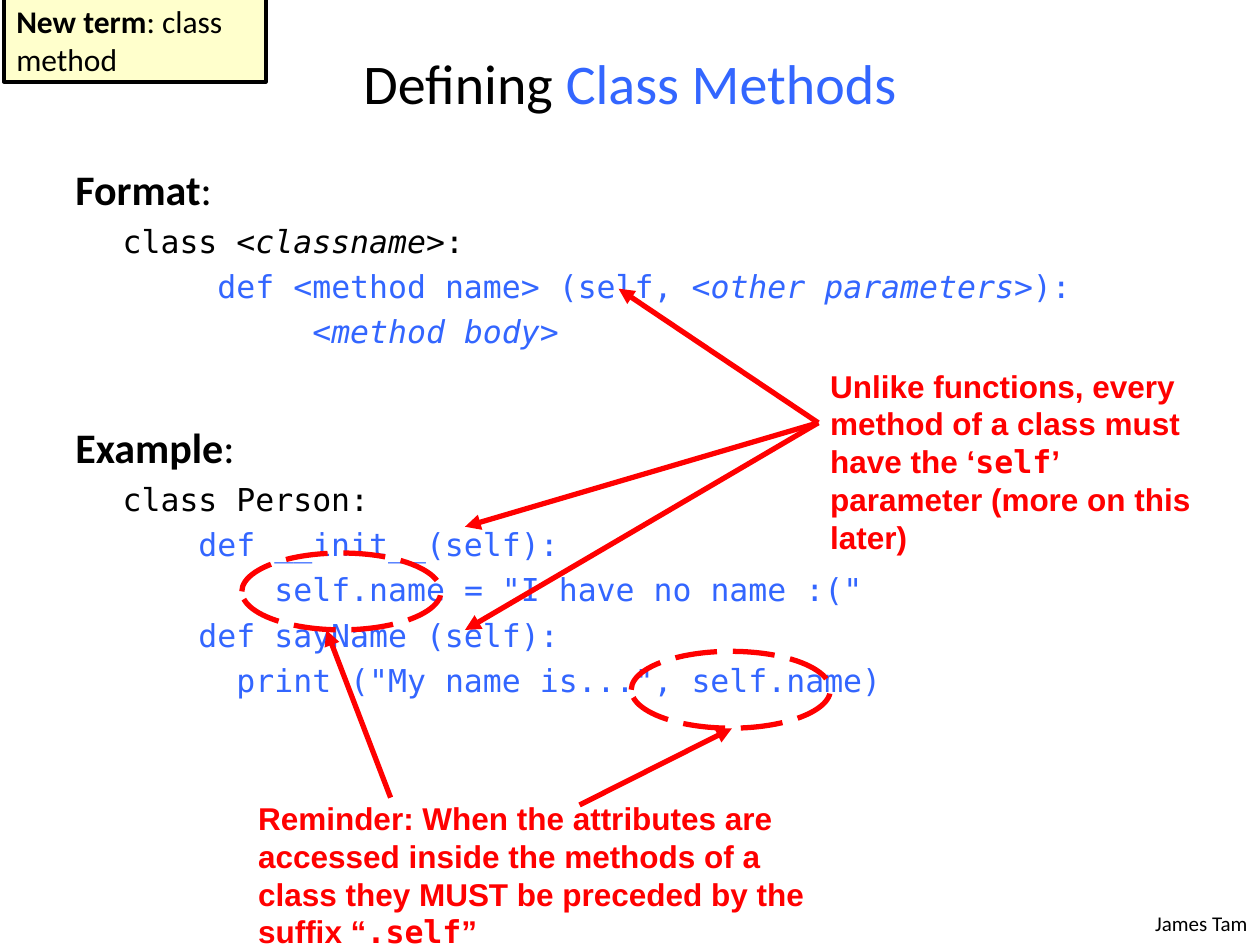
from lxml import etree
from pptx import Presentation
from pptx.dml.color import RGBColor
from pptx.enum.dml import MSO_LINE
from pptx.enum.shapes import MSO_CONNECTOR, MSO_SHAPE
from pptx.enum.text import MSO_ANCHOR, PP_ALIGN
from pptx.oxml.ns import qn
from pptx.util import Pt

LEFT, CENTER, RIGHT = PP_ALIGN.LEFT, PP_ALIGN.CENTER, PP_ALIGN.RIGHT
MIDDLE = MSO_ANCHOR.MIDDLE
STRAIGHT = MSO_CONNECTOR.STRAIGHT
RECTANGLE, OVAL = MSO_SHAPE.RECTANGLE, MSO_SHAPE.OVAL
LONG_DASH = MSO_LINE.LONG_DASH

BLACK, BLUE, RED, YELLOW = "000000", "3366FF", "FF0000", "FFFFCC"
SANS, CALLOUT, MONO = "Calibri", "Arial", "DejaVu Sans Mono"
TITLE_ONLY = 5


def rgb(hex_code):
    return RGBColor.from_string(hex_code)


class LessonSlide:
    """Holds the current slide and the lesson's visual style."""

    code_size = 18
    code_indent = 27
    char_width = 10.84
    line_width = 3

    def __init__(self, slide):
        self.slide = slide

    def fill_paragraph(self, paragraph, runs, font, size, color=BLACK, bold=False,
                       align=LEFT):
        """Fill a paragraph with (text, font overrides) pairs."""
        paragraph.alignment = align
        base = paragraph.font
        base.name, base.size, base.bold = font, Pt(size), bold
        base.color.rgb = rgb(color)
        for text, overrides in runs:
            run = paragraph.add_run()
            run.text = text
            if "color" in overrides:
                run.font.color.rgb = rgb(overrides["color"])
            if "name" in overrides:
                run.font.name = overrides["name"]
            if "bold" in overrides:
                run.font.bold = overrides["bold"]
            if "italic" in overrides:
                run.font.italic = overrides["italic"]

    def title(self, box, runs):
        title = self.slide.shapes.title
        title.left, title.top, title.width, title.height = map(Pt, box)
        title.text_frame.vertical_anchor = MIDDLE
        self.fill_paragraph(title.text_frame.paragraphs[0], runs, SANS, 32, align=CENTER)

    def text_frame(self, box):
        frame = self.slide.shapes.add_textbox(*map(Pt, box)).text_frame
        frame.word_wrap = True
        return frame

    def text(self, box, runs, font, size, **style):
        paragraph = self.text_frame(box).paragraphs[0]
        self.fill_paragraph(paragraph, runs, font, size, **style)

    def callout(self, box, runs):
        self.text(box, runs, CALLOUT, 18, color=RED, bold=True)

    def heading(self, paragraph, label, space_before):
        paragraph.space_before = Pt(space_before)
        self.fill_paragraph(paragraph, [(label, {"bold": True}), (":", {})], SANS, 24)

    def code_line(self, paragraph, depth, color, runs):
        """Add one line of code indented by depth characters."""
        paragraph.space_before = Pt(4.3)
        margin = Pt(self.code_indent + depth * self.char_width)
        paragraph._p.get_or_add_pPr().set("marL", str(margin))
        self.fill_paragraph(paragraph, runs, MONO, self.code_size, color=color)

    def listing(self, box, sections):
        """Put headed blocks of code into one text box."""
        frame = self.text_frame(box)
        paragraph = frame.paragraphs[0]
        for label, space_before, lines in sections:
            if label != sections[0][0]:
                paragraph = frame.add_paragraph()
            self.heading(paragraph, label, space_before)
            for line in lines:
                self.code_line(frame.add_paragraph(), *line)

    def shape(self, preset, box, line_color, line_width):
        shape = self.slide.shapes.add_shape(preset, *map(Pt, box))
        shape.shadow.inherit = False
        shape.line.color.rgb = rgb(line_color)
        shape.line.width = Pt(line_width)
        return shape

    def note(self, box, runs):
        note = self.shape(RECTANGLE, box, BLACK, 2)
        note.fill.solid()
        note.fill.fore_color.rgb = rgb(YELLOW)
        note.text_frame.word_wrap = True
        note.text_frame.vertical_anchor = MIDDLE
        self.fill_paragraph(note.text_frame.paragraphs[0], runs, SANS, 18)

    def ring(self, left, top):
        ring = self.shape(OVAL, (left, top, 113.8, 43.9), RED, self.line_width)
        ring.fill.background()
        ring.line.dash_style = LONG_DASH

    def arrow(self, start, end):
        arrow = self.slide.shapes.add_connector(STRAIGHT, *map(Pt, start + end))
        arrow.line.color.rgb = rgb(RED)
        arrow.line.width = Pt(self.line_width)
        properties = arrow._element.spPr
        outline = properties.find(qn("a:ln"))
        etree.SubElement(outline, qn("a:tailEnd"), type="triangle")
        etree.SubElement(properties, qn("a:effectLst"))


def main():
    presentation = Presentation()
    presentation.slide_width, presentation.slide_height = Pt(720), Pt(540)
    layout = presentation.slide_layouts[TITLE_ONLY]
    lesson = LessonSlide(presentation.slides.add_slide(layout))

    italic = {"italic": True}
    mono = {"name": MONO}

    lesson.text((624.2, 517, 95.8, 21.6), [("James Tam", {})], SANS, 12, align=RIGHT)
    lesson.title((36, 21.6, 648, 50.4),
                 [("Defining ", {}), ("Class Methods", {"color": BLUE})])

    format_lines = [
        (0, BLACK, [("class <", {}), ("classname", italic), (">:", {})]),
        (5, BLUE, [("def <method name> (self, <", {}),
                   ("other parameters", italic), (">):", {})]),
        (10, BLUE, [("<", {}), ("method body", italic), (">", {})]),
    ]
    example_lines = [
        (0, BLACK, [("class Person:", {})]),
        (4, BLUE, [("def __init__(self):", {})]),
        (8, BLUE, [('self.name = "I have no name :("', {})]),
        (4, BLUE, [("def sayName (self):", {})]),
        (6, BLUE, [('print ("My name is...", self.name)', {})]),
    ]
    lesson.listing((36, 90, 648, 426), [("Format", 5.8, format_lines),
                                        ("Example", 40.9, example_lines)])

    self_note = (467.6, 241.6)
    for self_parameter in [(353.5, 165), (265.7, 301), (265.7, 360)]:
        lesson.arrow(self_note, self_parameter)
    lesson.callout((467.3, 206, 235.4, 94.3), [
        ("Unlike functions, every method of a class must have the ‘", {}),
        ("self", mono), ("’ parameter (more on this later)", {})])

    lesson.callout((140.4, 453, 334.8, 94.3), [
        ("Reminder: When the attributes are accessed inside the methods of a "
         "class they MUST be preceded by the suffix “", {}),
        (".self", mono), ("”", {})])
    lesson.ring(360.7, 372.2)
    lesson.arrow((331.2, 460), (418.3, 416.2))
    lesson.ring(138.2, 316)
    lesson.arrow((223.2, 455.8), (186.5, 360))

    lesson.note((2.2, -1.4, 149.8, 48.2),
                [("New term", {"bold": True}), (": class method", {})])

    presentation.save("out.pptx")


if __name__ == "__main__":
    main()
